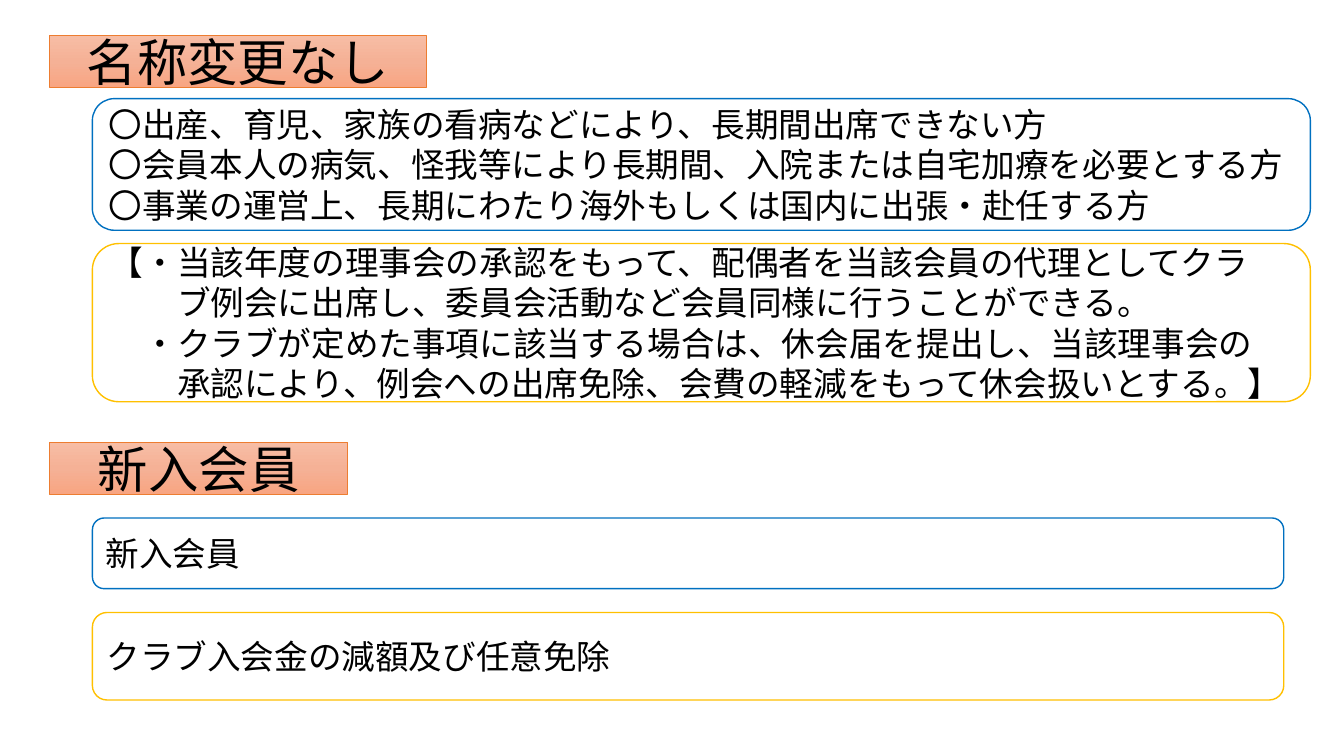
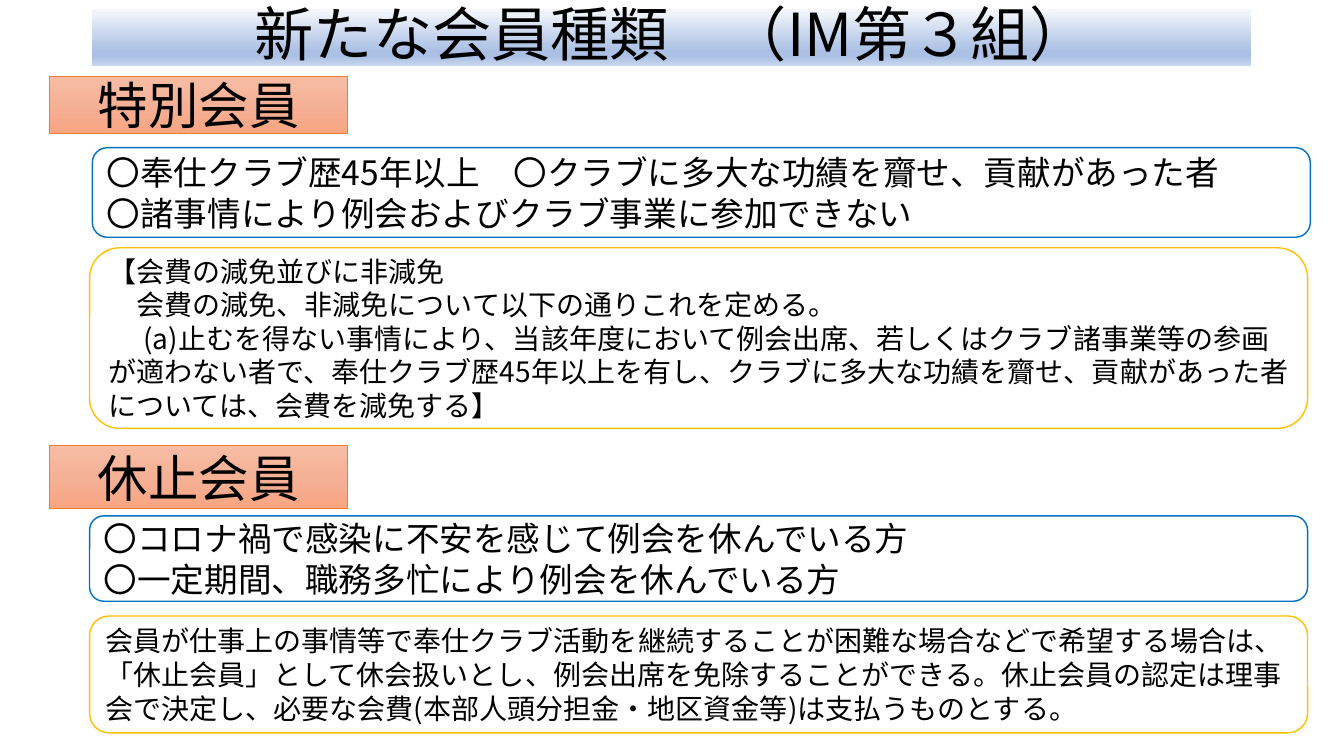
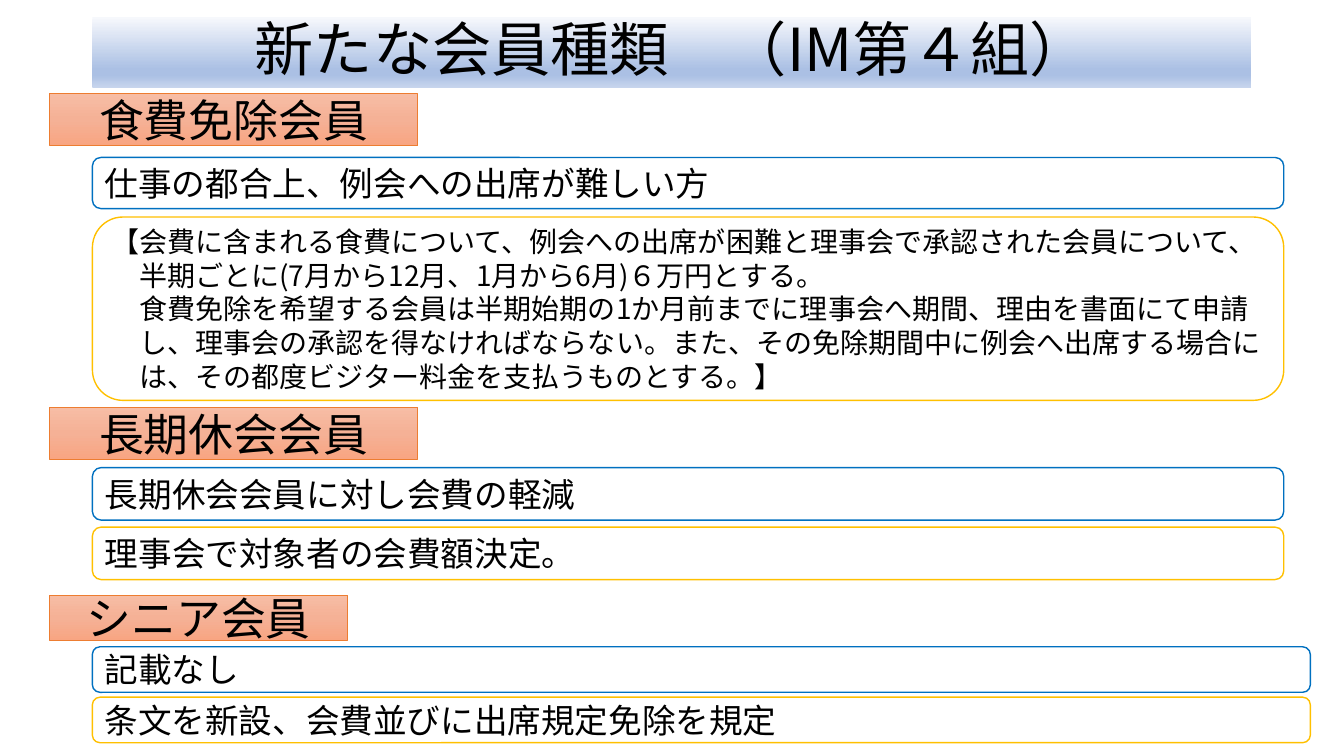
from lxml import etree
from pptx import Presentation
from pptx.dml.color import RGBColor
from pptx.enum import shapes, text as text_enum
from pptx.oxml import ns
from pptx.util import Pt

FONT = "Noto Sans CJK JP"
BLACK, WHITE = "000000", "FFFFFF"
BLUE, GOLD, ORANGE = "0070C0", "FFC000", "ED7D31"
TITLE_STOPS = [(0, "F6F8FC"), (74, "ABC0E4"), (83, "ABC0E4"), (100, "C7D5ED")]
LABEL_STOPS = [(0, "F7BDA5"), (50, "F5B196"), (100, "F8A582")]
TITLE_LEFT, TITLE_WIDTH = 66, 828
LABEL_LEFT, BOX_LEFT, BOX_LEFT_OUTER = 35.5, 66, 64
LABEL_SHORT, LABEL_MEDIUM, LABEL_LONG = 213, 263, 269
BOX_NARROW, BOX_WIDE = 851, 870


def colour(value):
    return RGBColor.from_string(value)


def write(para, text, size=24, align=None, spacing=None, left=0, first=0):
    span = para.add_run()
    span.text = text
    span.font.size = Pt(size)
    span.font.color.rgb = colour(BLACK)
    span.font.name = FONT
    properties = span.font._element
    etree.SubElement(properties, ns.qn("a:ea"), typeface=FONT)
    if align is not None:
        para.alignment = align
    if spacing is not None:
        para.line_spacing = spacing
    if left or first:
        layout = para._p.get_or_add_pPr()
        layout.set("marL", str(Pt(left)))
        layout.set("indent", str(Pt(first)))


def fill_gradient(shape, stops):
    shape.fill.gradient()
    shape.fill.gradient_angle = 270
    stop_list = shape.element.spPr.find(".//" + ns.qn("a:gsLst"))
    for stop in list(stop_list):
        stop_list.remove(stop)
    for position, value in stops:
        stop = etree.SubElement(stop_list, ns.qn("a:gs"), pos=str(position * 1000))
        etree.SubElement(stop, ns.qn("a:srgbClr"), val=value)


def add_panel(page, kind, left, top, width, height):
    shape = page.shapes.add_shape(kind, Pt(left), Pt(top), Pt(width), Pt(height))
    shape.shadow.inherit = False
    shape.text_frame.word_wrap = True
    shape.text_frame.vertical_anchor = text_enum.MSO_ANCHOR.MIDDLE
    return shape


def set_line(shape, value, width):
    shape.line.color.rgb = colour(value)
    shape.line.width = Pt(width)


def add_title(page, text, top, height):
    band = add_panel(page, shapes.MSO_SHAPE.RECTANGLE, TITLE_LEFT, top, TITLE_WIDTH, height)
    fill_gradient(band, TITLE_STOPS)
    band.line.fill.background()
    write(band.text_frame.paragraphs[0], text, size=42.3,
          align=text_enum.PP_ALIGN.CENTER, spacing=0.9)


def add_label(page, text, top, height, width=LABEL_SHORT, size=36):
    label = add_panel(page, shapes.MSO_SHAPE.RECTANGLE, LABEL_LEFT, top, width, height)
    fill_gradient(label, LABEL_STOPS)
    set_line(label, ORANGE, 0.5)
    write(label.text_frame.paragraphs[0], text, size=size, align=text_enum.PP_ALIGN.CENTER)


def add_box(page, outline, lines, top, height, width=BOX_WIDE, left=BOX_LEFT, size=24):
    box = add_panel(page, shapes.MSO_SHAPE.ROUNDED_RECTANGLE, left, top, width, height)
    box.fill.solid()
    box.fill.fore_color.rgb = colour(WHITE)
    set_line(box, outline, 1)
    frame = box.text_frame
    for index, (text, indent, first) in enumerate(lines):
        para = frame.add_paragraph() if index else frame.paragraphs[0]
        write(para, text, size=size, align=text_enum.PP_ALIGN.LEFT, left=indent, first=first)


def plain(*texts):
    return [(text, 0, 0) for text in texts]


def build_unchanged_names(page):
    add_label(page, "名称変更なし", 25.5, 37, width=LABEL_LONG)
    add_box(page, BLUE, plain(
        "〇出産、育児、家族の看病などにより、長期間出席できない方",
        "〇会員本人の病気、怪我等により長期間、入院または自宅加療を必要とする方",
        "〇事業の運営上、長期にわたり海外もしくは国内に出張・赴任する方"), 70.5, 94)
    add_box(page, GOLD, [
        ("【・当該年度の理事会の承認をもって、配偶者を当該会員の代理としてクラ", 0, 0),
        ("ブ例会に出席し、委員会活動など会員同様に行うことができる。", 48, 0),
        ("・クラブが定めた事項に該当する場合は、休会届を提出し、当該理事会の", 24, 0),
        ("承認により、例会への出席免除、会費の軽減をもって休会扱いとする。】", 48, 0)], 174, 113)
    add_label(page, "新入会員", 316, 37)
    add_box(page, BLUE, plain("新入会員"), 370, 50.5, width=BOX_NARROW)
    add_box(page, GOLD, plain("クラブ入会金の減額及び任意免除"), 437.5, 62.5, width=BOX_NARROW)


def build_third_group(page):
    add_title(page, "新たな会員種類　（IM第３組）", 6.5, 40.5)
    add_label(page, "特別会員", 54.5, 40.5)
    add_box(page, BLUE, plain(
        "〇奉仕クラブ歴45年以上　〇クラブに多大な功績を齎せ、貢献があった者",
        "〇諸事情により例会およびクラブ事業に参加できない"), 105.5, 64)
    add_box(page, GOLD, [
        ("【会費の減免並びに非減免", 0, 0),
        ("会費の減免、非減免について以下の通りこれを定める。", 20, 0),
        ("(a)止むを得ない事情により、当該年度において例会出席、若しくはクラブ諸事業等の参画"
         "が適わない者で、奉仕クラブ歴45年以上を有し、クラブに多大な功績を齎せ、"
         "貢献があった者については、会費を減免する】", 0, 25)],
        177, 129, left=BOX_LEFT_OUTER, size=20)
    add_label(page, "休止会員", 318, 45.5)
    add_box(page, BLUE, plain(
        "〇コロナ禍で感染に不安を感じて例会を休んでいる方",
        "〇一定期間、職務多忙により例会を休んでいる方"), 368.5, 61, left=BOX_LEFT_OUTER)
    add_box(page, GOLD, plain(
        "会員が仕事上の事情等で奉仕クラブ活動を継続することが困難な場合などで希望する場合は、"
        "「休止会員」として休会扱いとし、例会出席を免除することができる。休止会員の認定は"
        "理事会で決定し、必要な会費(本部人頭分担金・地区資金等)は支払うものとする。"),
        440, 83.5, left=BOX_LEFT_OUTER, size=20)


def build_fourth_group(page):
    add_title(page, "新たな会員種類　（IM第４組）", 12.5, 50)
    add_label(page, "食費免除会員", 67, 37, width=LABEL_MEDIUM, size=32)
    add_box(page, BLUE, plain("仕事の都合上、例会への出席が難しい方"),
            112.5, 36.5, width=BOX_NARROW)
    add_box(page, GOLD, [
        ("【会費に含まれる食費について、例会への出席が困難と理事会で承認された会員について、", 0, 0),
        ("半期ごとに(7月から12月、1月から6月)６万円とする。", 20, 0),
        ("食費免除を希望する会員は半期始期の1か月前までに理事会へ期間、理由を書面にて申請", 20, 0),
        ("し、理事会の承認を得なければならない。また、その免除期間中に例会へ出席する場合に", 20, 0),
        ("は、その都度ビジター料金を支払うものとする。】", 20, 0)],
        155, 131, width=BOX_NARROW, size=20)
    add_label(page, "長期休会会員", 291, 37, width=LABEL_MEDIUM, size=32)
    add_box(page, BLUE, plain("長期休会会員に対し会費の軽減"), 334, 37.5, width=BOX_NARROW)
    add_box(page, GOLD, plain("理事会で対象者の会費額決定。"), 376.5, 37.5, width=BOX_NARROW)
    add_label(page, "シニア会員", 425, 32.5, size=32)
    add_box(page, BLUE, plain("記載なし"), 462, 32.5)
    add_box(page, GOLD, plain("条文を新設、会費並びに出席規定免除を規定"), 498, 32.5)


def main():
    deck = Presentation()
    deck.slide_width, deck.slide_height = Pt(960), Pt(540)
    for build in (build_unchanged_names, build_third_group, build_fourth_group):
        build(deck.slides.add_slide(deck.slide_layouts[6]))
    deck.save("out.pptx")


if __name__ == "__main__":
    main()
